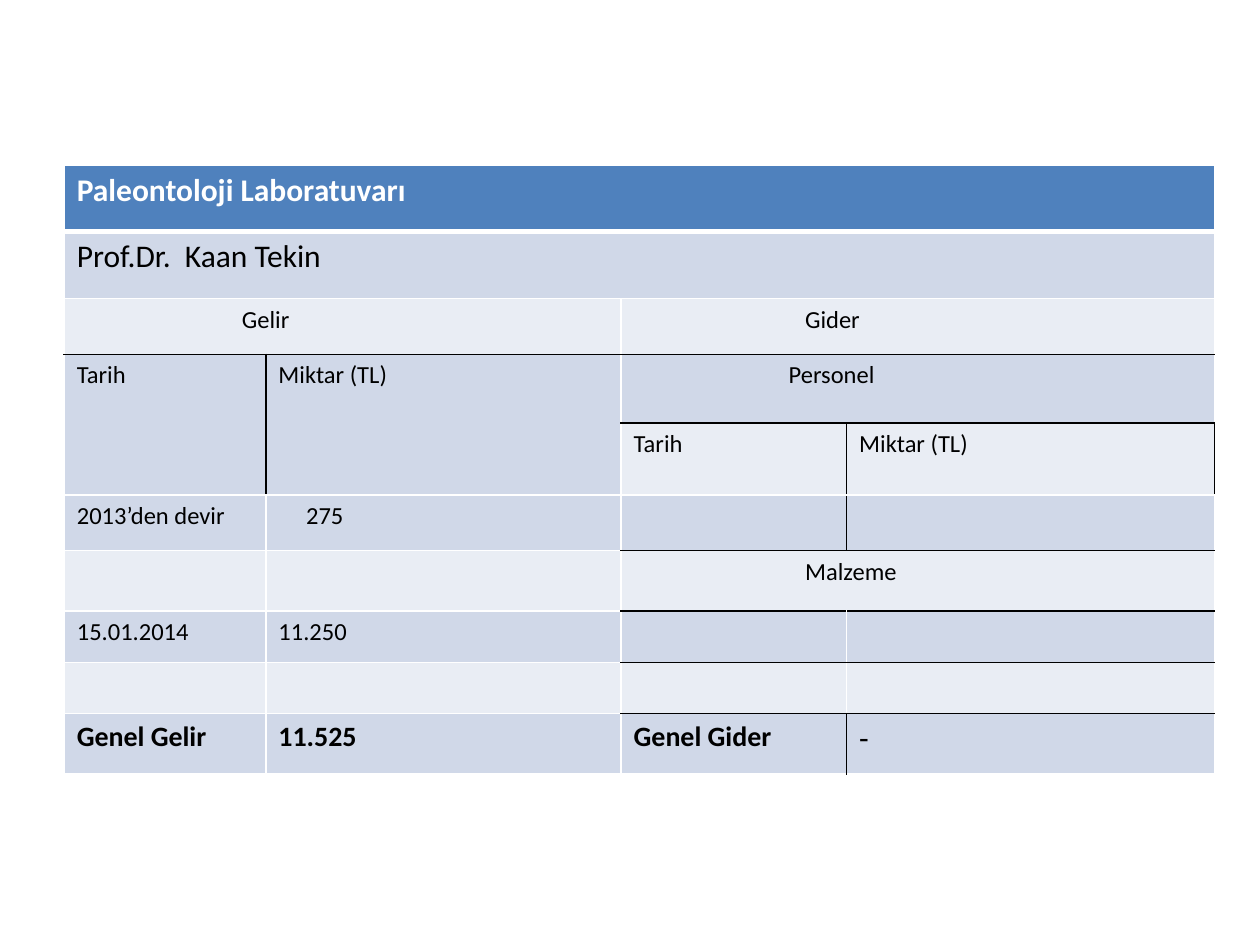
import dataclasses
import typing
import pptx
import pptx.dml.color
import pptx.oxml
import pptx.oxml.ns
import pptx.util


@dataclasses.dataclass(frozen=True)
class Theme:
    font: str = "Calibri"
    head: str = "4F81BD"
    dark: str = "D0D8E8"
    light: str = "E9EDF4"
    line: str = "000000"
    white: str = "FFFFFF"
    ink: str = "000000"
    big: int = 18
    mid: int = 16
    small: int = 14


@dataclasses.dataclass(frozen=True)
class Item:
    row: int
    col: int
    text: str = ""
    rows: int = 1
    cols: int = 1
    black: str = ""
    shift: float = 0
    size: int = Theme.small
    bold: bool = False


LOOK = Theme()
WIDE, HIGH = 10, 7.5
LEFT, TOP = 5.1, 17.5
COLS = (16, 28.2, 17.9, 29.2)
ROWS = (7, 7.1, 5.9, 7.3, 7.6, 5.9, 6.4, 5.4, 5.4, 6.4)
PAD = 1

ITEMS = (
    Item(0, 0, "Paleontoloji Laboratuvarı", cols=4, size=LOOK.big, bold=True),
    Item(1, 0, "Prof.Dr.  Kaan Tekin", cols=4, size=LOOK.big),
    Item(2, 0, "Gelir", cols=2, black="B", shift=13.1),
    Item(2, 2, "Gider", cols=2, black="B", shift=13.6),
    Item(3, 0, "Tarih", rows=2, black="TR"),
    Item(3, 1, "Miktar (TL)", rows=2, black="LT"),
    Item(3, 2, "Personel", cols=2, black="TRB", shift=12.3),
    Item(4, 2, "Tarih", black="TR"),
    Item(4, 3, "Miktar (TL)", black="LTR"),
    Item(5, 0, "2013’den devir"),
    Item(5, 1, "275", shift=2.2),
    Item(5, 2, black="RB"),
    Item(5, 3, black="LB"),
    Item(6, 0),
    Item(6, 1),
    Item(6, 2, "Malzeme", cols=2, black="TB", shift=13.6),
    Item(7, 0, "15.01.2014"),
    Item(7, 1, "11.250"),
    Item(7, 2, black="TB"),
    Item(7, 3, black="TB"),
    Item(8, 0),
    Item(8, 1),
    Item(8, 2, black="TB"),
    Item(8, 3, black="TB"),
    Item(9, 0, "Genel Gelir", size=LOOK.mid, bold=True),
    Item(9, 1, "11.525", size=LOOK.mid, bold=True),
    Item(9, 2, "Genel Gider", black="TR", size=LOOK.mid, bold=True),
    Item(9, 3, "-", black="LT", size=LOOK.big),
)


def across(share: float) -> int:
    return pptx.util.Inches(WIDE * share / 100)


def down(share: float) -> int:
    return pptx.util.Inches(HIGH * share / 100)


def tint(code: str) -> pptx.dml.color.RGBColor:
    return pptx.dml.color.RGBColor.from_string(code)


def apply(thing: typing.Any, style: dict[str, typing.Any]) -> None:
    for name, value in style.items():
        setattr(thing, name, value)


def edge(cell: typing.Any, side: str, color: str, width: float) -> None:
    space = pptx.oxml.ns.nsdecls("a")
    cell._tc.get_or_add_tcPr().append(pptx.oxml.parse_xml(
        f'<a:ln{side} {space} w="{pptx.util.Pt(width)}"><a:solidFill>'
        f'<a:srgbClr val="{color}"/></a:solidFill></a:ln{side}>'))


def frame(table: typing.Any, item: Item) -> None:
    last_row, last_col = item.row + item.rows - 1, item.col + item.cols - 1
    for row in range(item.row, last_row + 1):
        for col in range(item.col, last_col + 1):
            cell = table.cell(row, col)
            outer = {"L": col == item.col, "R": col == last_col,
                     "T": row == item.row, "B": row == last_row}
            for side, shown in outer.items():
                if shown:
                    thick = (row, side) in ((0, "B"), (1, "T"))
                    color = LOOK.line if side in item.black else LOOK.white
                    edge(cell, side, color, 3 if thick else 1)
            shade = LOOK.dark if row % 2 else LOOK.light
            cell.fill.solid()
            cell.fill.fore_color.rgb = tint(shade if row else LOOK.head)


def fill(table: typing.Any, item: Item) -> None:
    cell = table.cell(item.row, item.col)
    if item.rows * item.cols > 1:
        cell.merge(table.cell(item.row + item.rows - 1,
                              item.col + item.cols - 1))
    frame(table, item)
    cell.margin_left = across(PAD + item.shift)
    if item.text:
        run = cell.text_frame.paragraphs[0].add_run()
        run.text = item.text
        apply(run.font, {"name": LOOK.font, "size": pptx.util.Pt(item.size),
                         "bold": item.bold})
        run.font.color.rgb = tint(LOOK.ink if item.row else LOOK.white)


def main() -> None:
    deck = pptx.Presentation()
    apply(deck, {"slide_width": across(100), "slide_height": down(100)})
    slide = deck.slides.add_slide(deck.slide_layouts[6])
    table = slide.shapes.add_table(
        len(ROWS), len(COLS), across(LEFT), down(TOP),
        across(sum(COLS)), down(sum(ROWS))).table
    for col, share in zip(table.columns, COLS):
        col.width = across(share)
    for row, share in zip(table.rows, ROWS):
        row.height = down(share)
    for item in ITEMS:
        fill(table, item)
    deck.save("out.pptx")


if __name__ == "__main__":
    main()
